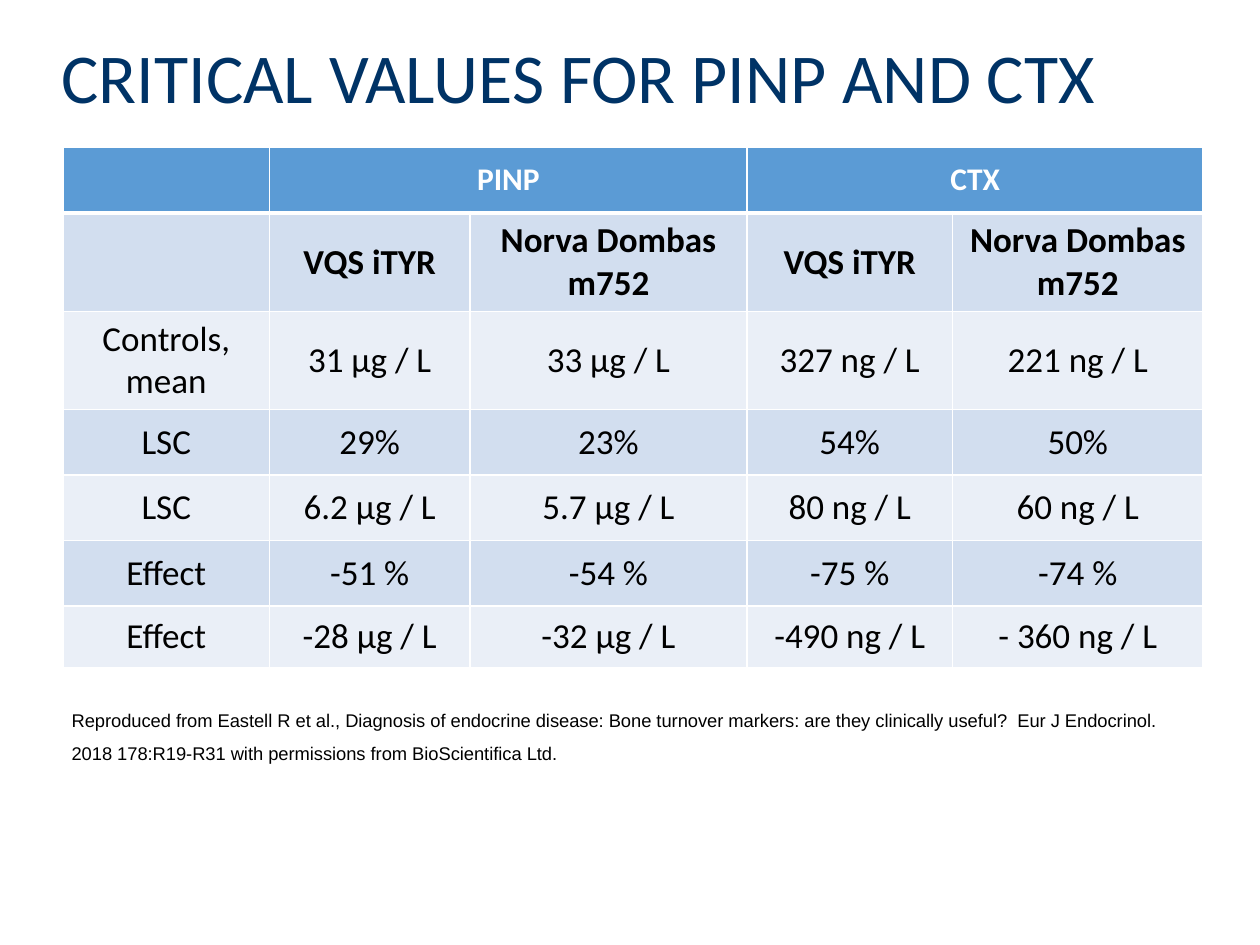
import pptx
import pptx.util
import pptx.dml.color
import pptx.enum.shapes
import pptx.enum.text
import pptx.oxml.ns
import lxml.etree

Inches, Pt = pptx.util.Inches, pptx.util.Pt
RGB = pptx.dml.color.RGBColor
ALIGN, ANCHOR = pptx.enum.text.PP_ALIGN, pptx.enum.text.MSO_ANCHOR

# Content
TITLE = "CRITICAL VALUES FOR PINP AND CTX"
KITS = ["VQS iTYR", "Norva Dombas m752"]
ROWS = [
    ["", "PINP", "", "CTX", ""],
    [""] + KITS * 2,
    ["Controls, mean", "31 μg / L", "33 μg / L", "327 ng / L", "221 ng / L"],
    ["LSC", "29%", "23%", "54%", "50%"],
    ["LSC", "6.2 μg / L", "5.7 μg / L", "80 ng / L", "60 ng / L"],
    ["Effect", "-51 %", "-54 %", "-75 %", "-74 %"],
    ["Effect", "-28 μg / L", "-32 μg / L", "-490 ng / L", "- 360 ng / L"],
]
CREDIT = ("Reproduced from Eastell R et al., Diagnosis of endocrine disease: "
          "Bone turnover markers: are they clinically useful?  Eur J Endocrinol. "
          "2018 178:R19-R31 with permissions from BioScientifica Ltd.")

# Grid in inches
WIDTHS = [1.64, 1.59, 2.2, 1.63, 1.99]
HEIGHTS = [0.52, 0.75, 0.75, 0.52, 0.52, 0.52, 0.49]

NAVY = RGB(0x00, 0x33, 0x66)
BLUE = RGB(0x5B, 0x9B, 0xD5)
BANDS = [RGB(0xEA, 0xEF, 0xF7), RGB(0xD2, 0xDE, 0xEF)]
WHITE, BLACK = RGB(255, 255, 255), RGB(0, 0, 0)


def style(para, name, size, color, bold=False):
    font = para.font
    font.name, font.size, font.bold = name, Pt(size), bold
    font.color.rgb = color


def edge(cell, side, width):
    qn = pptx.oxml.ns.qn
    props = cell._tc.get_or_add_tcPr()
    line = lxml.etree.SubElement(props, qn("a:ln" + side), w=str(Pt(width)))
    fill = lxml.etree.SubElement(line, qn("a:solidFill"))
    lxml.etree.SubElement(fill, qn("a:srgbClr"), val=str(WHITE))


deck = pptx.Presentation()
deck.slide_width, deck.slide_height = Inches(10), Inches(7.5)
slide = deck.slides.add_slide(deck.slide_layouts[5])

# Title
title = slide.shapes.title
title.left, title.top = Inches(0.39), Inches(0.31)
title.width, title.height = Inches(8.44), Inches(0.66)
title.text = TITLE
frame = title.text_frame
frame.vertical_anchor = ANCHOR.MIDDLE
frame.auto_size = pptx.enum.text.MSO_AUTO_SIZE.NONE
para = frame.paragraphs[0]
para.alignment, para.line_spacing = ALIGN.LEFT, 0.9
style(para, "Calibri", 40, NAVY)

# Table
table = slide.shapes.add_table(
    len(ROWS), len(WIDTHS), Inches(0.5), Inches(1.17),
    Inches(sum(WIDTHS)), Inches(sum(HEIGHTS))).table
for col, width in zip(table.columns, WIDTHS):
    col.width = Inches(width)
for r, (row, height) in enumerate(zip(ROWS, HEIGHTS)):
    table.rows[r].height = Inches(height)
    for c, text in enumerate(row):
        cell = table.cell(r, c)
        cell.text = text
        cell.vertical_anchor = ANCHOR.MIDDLE
        para = cell.text_frame.paragraphs[0]
        para.alignment = ALIGN.CENTER
        style(para, "Calibri", 20 if r else 18, BLACK if r else WHITE, r < 2)
        for side in "LRTB":
            thick = (r, side) in [(0, "B"), (1, "T")]
            edge(cell, side, 3 if thick else 1)
        cell.fill.solid()
        cell.fill.fore_color.rgb = BANDS[r % 2] if r else BLUE
for c in (1, 3):
    table.cell(0, c).merge(table.cell(0, c + 1))

# Credit
credit = slide.shapes.add_shape(
    pptx.enum.shapes.MSO_SHAPE.RECTANGLE,
    Inches(0.47), Inches(5.49), Inches(9.09), Inches(0.68))
credit.shadow.inherit = False
credit.fill.solid()
credit.fill.fore_color.rgb = WHITE
credit.line.fill.background()
frame = credit.text_frame
frame.word_wrap, frame.vertical_anchor = True, ANCHOR.TOP
para = frame.paragraphs[0]
para.text = CREDIT
para.alignment, para.line_spacing = ALIGN.LEFT, 1.5
style(para, "Arial", 10.5, BLACK)

deck.save("out.pptx")
